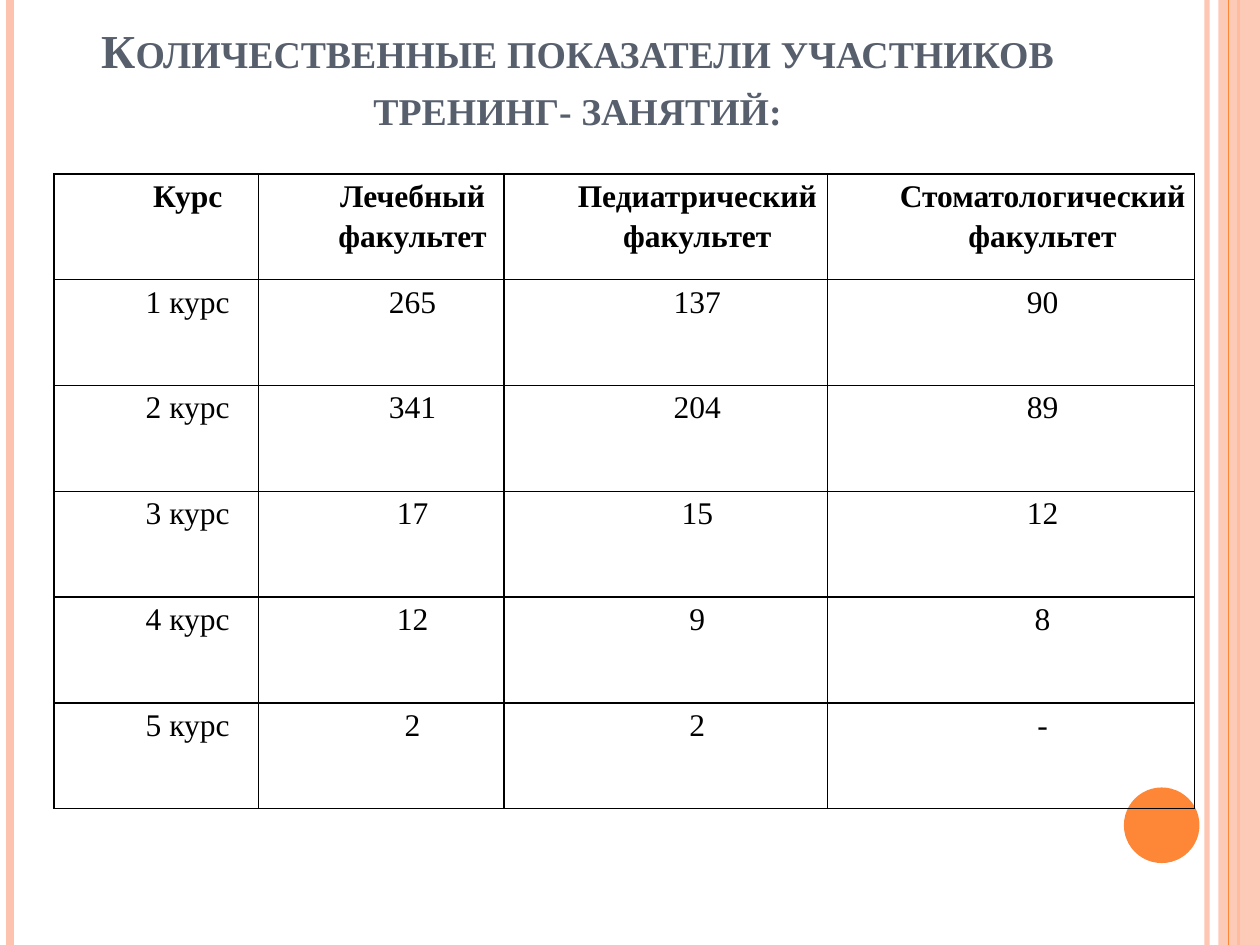
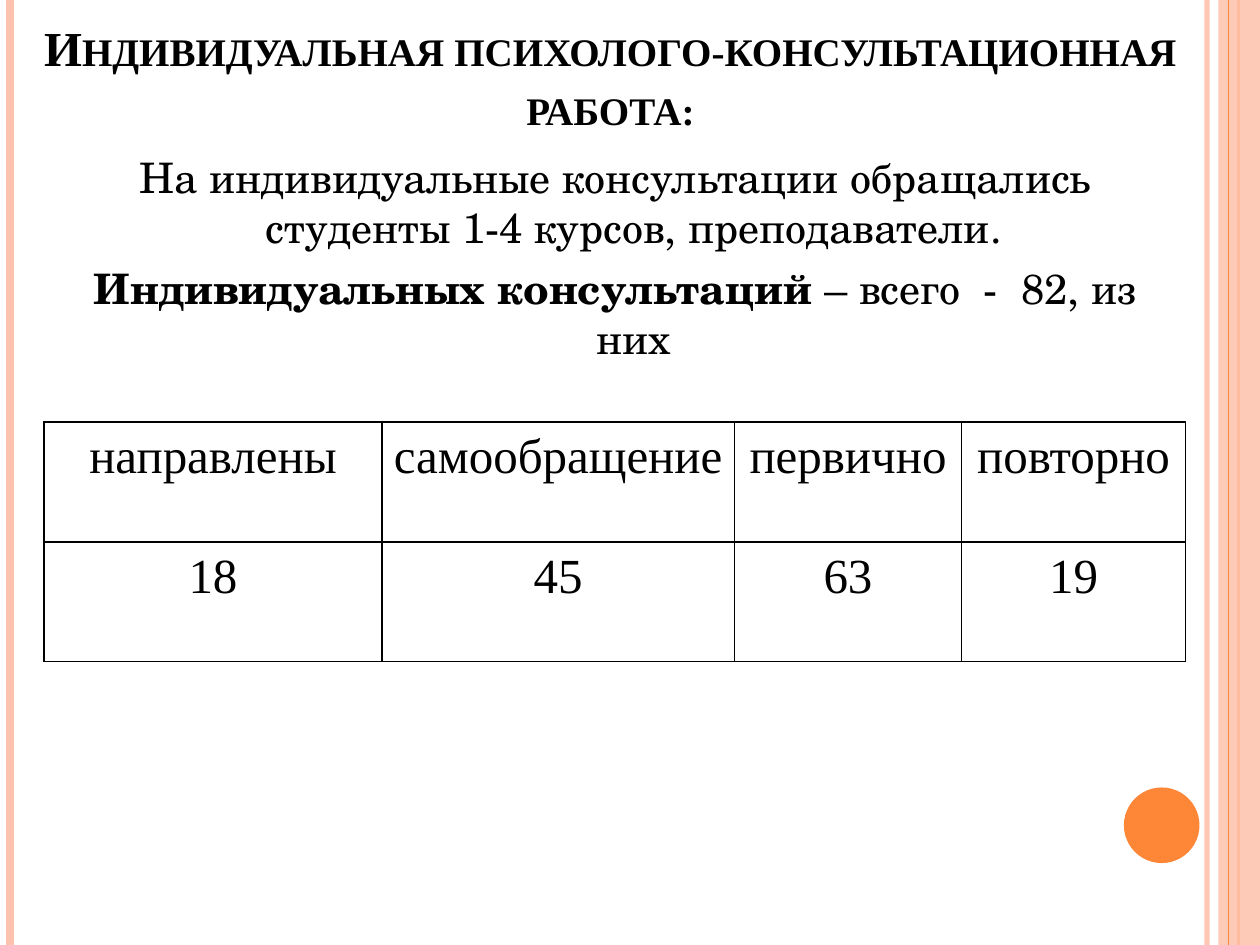
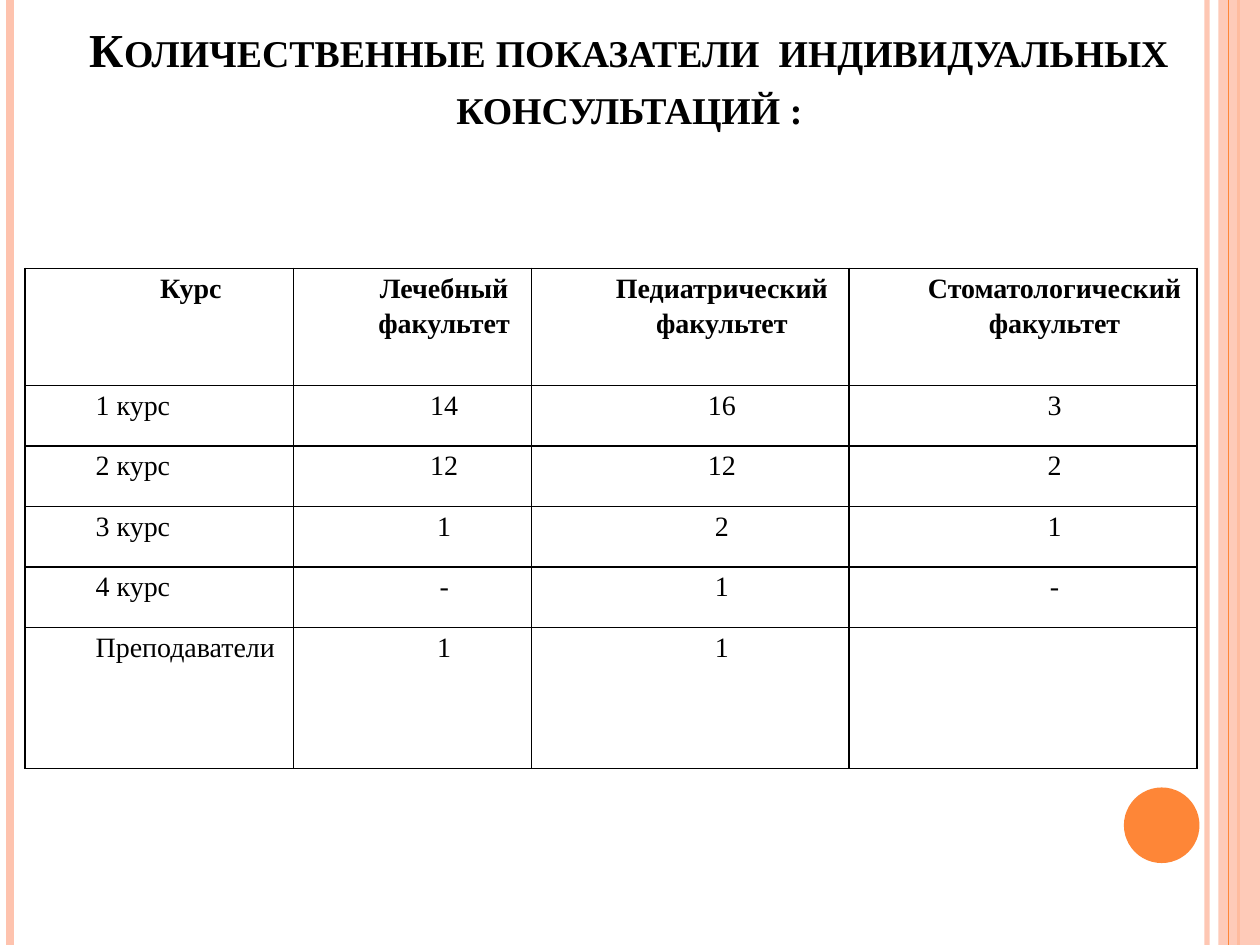
"""Build three slides on the turnout of training sessions and consultations."""
import dataclasses

import lxml.etree
import pptx
import pptx.dml.color
import pptx.enum.shapes
import pptx.enum.text
import pptx.oxml.ns
import pptx.util

Inches = pptx.util.Inches
Pt = pptx.util.Pt
qn = pptx.oxml.ns.qn
Shape = pptx.enum.shapes.MSO_SHAPE
Align = pptx.enum.text.PP_ALIGN


@dataclasses.dataclass(frozen=True)
class Theme:
    """Colours, fonts and type sizes."""
    peach: str = "FEC3AE"
    orange: str = "FE8637"
    slate: str = "575F6D"
    black: str = "000000"
    serif: str = "Times New Roman"
    school: str = "TeX Gyre Schola"
    head: float = 27
    wide: float = 27.9
    body: float = 24
    grid: float = 18
    small: float = 16
    large: float = 28


theme = Theme()


def put(par, text, size, face=theme.serif, color=theme.black, bold=False,
        caps=False, align=Align.CENTER, left=0, hang=0, line=None,
        before=0, after=0):
    """Add a run to a paragraph and format both."""
    par.alignment = align
    par.line_spacing = line
    par.space_before, par.space_after = Pt(before), Pt(after)
    props = par._p.get_or_add_pPr()
    props.set("marL", str(Inches(left)))
    props.set("indent", str(Inches(hang)))
    run = par.add_run()
    run.text = text
    run.font.size, run.font.name, run.font.bold = Pt(size), face, bold
    run.font.color.rgb = pptx.dml.color.RGBColor.from_string(color)
    if caps:
        run._r.get_or_add_rPr().set("cap", "small")


def tint(fill, color, alpha=100):
    """Fill with a colour that may be see-through."""
    fill.solid()
    fill.fore_color.rgb = pptx.dml.color.RGBColor.from_string(color)
    if alpha < 100:
        node = fill._xPr.find(qn("a:solidFill"))[0]
        lxml.etree.SubElement(node, qn("a:alpha")).set("val", str(alpha * 1000))


faculties = ["Курс", "Лечебный факультет", "Педиатрический факультет",
             "Стоматологический факультет"]
pages = [
    dict(title="Количественные показатели участников тренинг- занятий:",
         box=(0.5, 0.3, 8.17, 1.25), size=theme.head, color=theme.slate,
         body=[], place=(0.43, 1.38), cols=[1.62, 1.95, 2.57, 2.91],
         rows=[0.84] * 6, type=theme.grid, pad=0.07, left=0.5,
         bold=True, first=Align.CENTER,
         cells=[faculties,
                ["1 курс", "265", "137", "90"],
                ["2 курс", "341", "204", "89"],
                ["3 курс", "17", "15", "12"],
                ["4 курс", "12", "9", "8"],
                ["5 курс", "2", "2", "-"]]),
    dict(title="Индивидуальная психолого-консультационная работа:",
         box=(0.2, 0.3, 9.29, 1.25), size=theme.wide, color=theme.black,
         body=[[("На индивидуальные консультации обращались студенты "
                 "1-4 курсов, преподаватели.", False)],
               [("Индивидуальных консультаций", True),
                (" – всего  -  82, из них", False)]],
         place=(0.35, 3.35), cols=[2.68, 2.8, 1.8, 1.78],
         rows=[0.95] * 2, type=theme.large, pad=0.07, left=0,
         bold=False, first=Align.CENTER,
         cells=[["направлены", "самообращение", "первично", "повторно"],
                ["18", "45", "63", "19"]]),
    dict(title="Количественные показатели  индивидуальных консультаций :",
         box=(0.5, 0.3, 8.99, 1.24), size=theme.head, color=theme.black,
         body=[], place=(0.2, 2.13), cols=[2.13, 1.89, 2.52, 2.76],
         rows=[0.93] + [0.48] * 4 + [1.12], type=theme.small, pad=0.06,
         left=0.5, bold=True, first=Align.LEFT,
         cells=[faculties,
                ["1 курс", "14", "16", "3"],
                ["2 курс", "12", "12", "2"],
                ["3 курс", "1", "2", "1"],
                ["4 курс", "-", "1", "-"],
                ["Преподаватели", "1", "1", ""]]),
]
decor = [
    ("line", 9.58, theme.peach, 3, 93),
    ("line", 0.08, theme.peach, 4.5, 100),
    ("line", 9.83, theme.orange, 1.5, 100),
    (Shape.RECTANGLE, (9.67, 0, 0.33, 7.5), theme.peach, 0, 87),
    ("line", 9.75, theme.orange, 0.75, 100),
    (Shape.OVAL, (8.92, 6.25, 0.6, 0.6), theme.orange, 0, 100),
]

deck = pptx.Presentation()
deck.slide_width, deck.slide_height = Inches(10), Inches(7.5)

for page in pages:
    slide = deck.slides.add_slide(deck.slide_layouts[6])
    shapes = slide.shapes

    for kind, spot, color, width, alpha in decor:
        if kind == "line":
            rule = shapes.add_connector(
                pptx.enum.shapes.MSO_CONNECTOR.STRAIGHT,
                Inches(spot), 0, Inches(spot), deck.slide_height)
            rule.line.width = Pt(width)
            tint(rule.line.fill, color, alpha)
            lxml.etree.SubElement(rule._element.spPr, qn("a:effectLst"))
        else:
            form = shapes.add_shape(kind, *map(Inches, spot))
            form.shadow.inherit = False
            form.line.fill.background()
            tint(form.fill, color, alpha)

    frame = shapes.add_textbox(*map(Inches, page["box"])).text_frame
    frame.word_wrap = True
    frame.vertical_anchor = pptx.enum.text.MSO_ANCHOR.BOTTOM
    frame.margin_bottom = Inches(0.48)
    put(frame.paragraphs[0], page["title"], page["size"],
        color=page["color"], bold=True, caps=True)

    if page["body"]:
        frame = shapes.add_textbox(*map(Inches, (0.35, 1.15, 9.06, 2.05))).text_frame
        frame.word_wrap = True
        for n, parts in enumerate(page["body"]):
            par = frame.add_paragraph() if n else frame.paragraphs[0]
            for text, bold in parts:
                put(par, text, theme.body, face=theme.school, bold=bold,
                    left=0.3, hang=-0.3, before=6)

    cols, rows = page["cols"], page["rows"]
    table = shapes.add_table(
        len(rows), len(cols), *map(Inches, page["place"]),
        Inches(sum(cols)), Inches(sum(rows))).table
    table.first_row = table.horz_banding = False
    for col, width in zip(table.columns, cols):
        col.width = Inches(width)
    for row, height in zip(table.rows, rows):
        row.height = Inches(height)
    for r, texts in enumerate(page["cells"]):
        for c, text in enumerate(texts):
            cell = table.cell(r, c)
            cell.margin_left = cell.margin_right = Inches(page["pad"])
            cell.margin_top = cell.margin_bottom = 0
            cell.fill.background()
            props = cell._tc.get_or_add_tcPr()
            for n, side in enumerate("LRTB"):
                edge = lxml.etree.Element(qn("a:ln" + side), w=str(Pt(1)))
                fill = lxml.etree.SubElement(edge, qn("a:solidFill"))
                lxml.etree.SubElement(fill, qn("a:srgbClr"), val=theme.black)
                props.insert(n, edge)
            if text:
                put(cell.text_frame.paragraphs[0], text, page["type"],
                    bold=page["bold"] and r == 0, left=page["left"], line=1.15,
                    align=page["first"] if r and c == 0 else Align.CENTER,
                    after=10 if page["left"] and c == 3 else 0)

deck.save("out.pptx")
